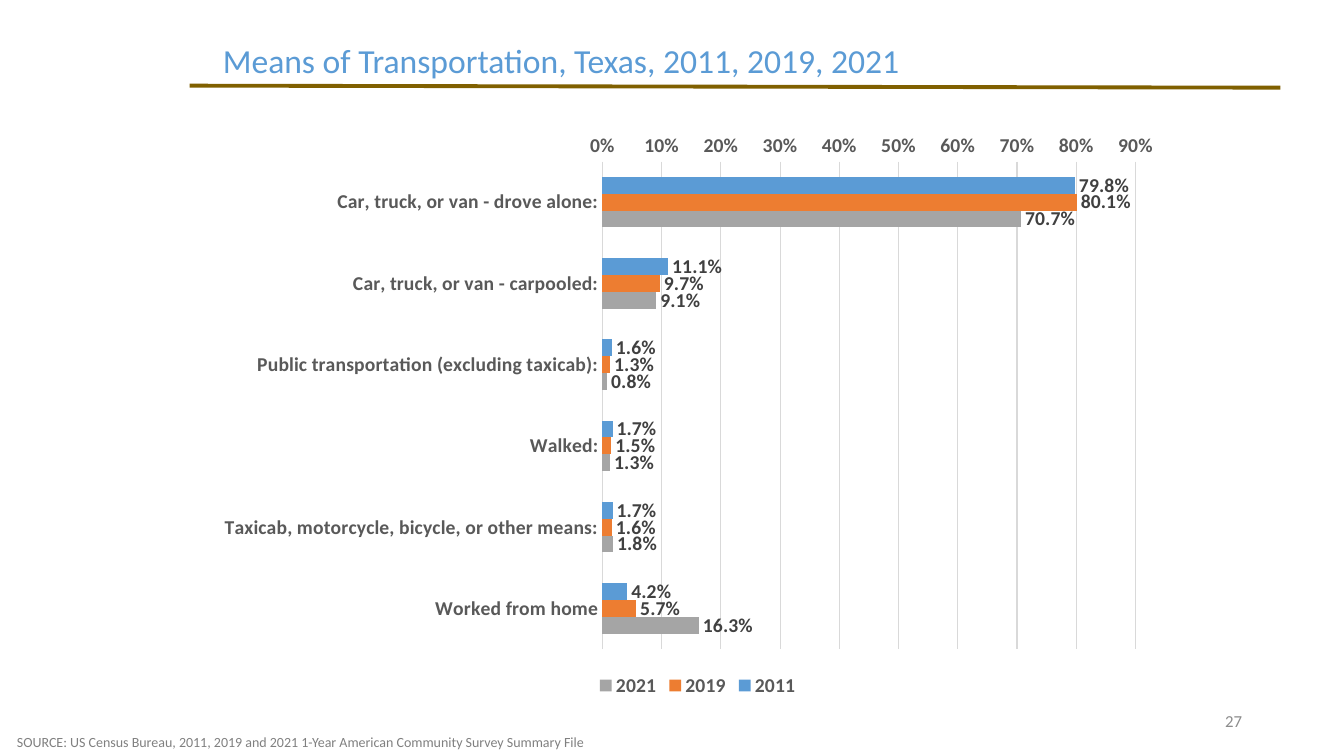
"""Build the slide on means of transportation in Texas."""
from lxml import etree
from pptx import Presentation
from pptx import util as u
from pptx.chart import data
from pptx.dml import color
from pptx.enum import chart as ce, shapes, text
from pptx.oxml import ns

COLORS = {"title": "5B9BD5", "rule": "806000", "number": "8C8C8C", "source": "808080",
          "axis": "595959", "grid": "D9D9D9", "label": "404040", "base": "000000",
          "2011": "5B9BD5", "2019": "ED7D31", "2021": "A5A5A5"}
CATEGORIES = ["Car, truck, or van - drove alone:", "Car, truck, or van - carpooled:",
              "Public transportation (excluding taxicab):", "Walked:",
              "Taxicab, motorcycle, bicycle, or other means:", "Worked from home"]
SHARES = {"2011": [0.798, 0.111, 0.016, 0.017, 0.017, 0.042],
          "2019": [0.801, 0.097, 0.013, 0.015, 0.016, 0.057],
          "2021": [0.707, 0.091, 0.008, 0.013, 0.018, 0.163]}


class Deck:
    """Style and current slide; places are percentages of the slide's size."""

    font = "Calibri"

    def __init__(self):
        self.prs = Presentation()
        self.prs.slide_width, self.prs.slide_height = u.Inches(13.33), u.Inches(7.5)
        self.s = self.prs.slides.add_slide(self.prs.slide_layouts[5])

    def place(self, x, y, w, h):
        sw, sh = self.prs.slide_width, self.prs.slide_height
        return [int(v * side / 100) for v, side in zip((x, y, w, h), (sw, sh, sw, sh))]

    def rgb(self, name):
        return color.RGBColor.from_string(COLORS[name])

    def style(self, font, size, name, bold=False):
        font.name, font.size, font.bold = self.font, u.Pt(size), bold
        font.color.rgb = self.rgb(name)

    def add_text(self, sp, content, size, name, align=text.PP_ALIGN.LEFT,
                 anchor=text.MSO_ANCHOR.TOP, wrap=False, spacing=1.0):
        tf = sp.text_frame
        tf.word_wrap, tf.vertical_anchor = wrap, anchor
        tf.auto_size = text.MSO_AUTO_SIZE.NONE if wrap else text.MSO_AUTO_SIZE.SHAPE_TO_FIT_TEXT
        p = tf.paragraphs[0]
        p.alignment, p.line_spacing, p.space_before = align, spacing, u.Pt(0)
        r = p.add_run()
        r.text = content
        self.style(r.font, size, name)

    def title(self, box, content):
        sp = self.s.shapes.title
        sp.left, sp.top, sp.width, sp.height = self.place(*box)
        self.add_text(sp, content, 24, "title", spacing=0.9)

    def note(self, box, content, size, name, **layout):
        self.add_text(self.s.shapes.add_textbox(*self.place(*box)), content, size, name, **layout)

    def rule(self, ends, name, width):
        sp = self.s.shapes.add_connector(shapes.MSO_CONNECTOR.STRAIGHT, *self.place(*ends))
        sp.line.color.rgb, sp.line.width = self.rgb(name), u.Pt(width)
        etree.SubElement(sp._element.spPr, ns.qn("a:effectLst"))

    def axis(self, axis):
        axis.major_tick_mark = axis.minor_tick_mark = ce.XL_TICK_MARK.NONE
        self.style(axis.tick_labels.font, 14, "axis", True)

    def plot_area(self, chart, **frame):
        area = chart._chartSpace.chart.plotArea
        for old in area.findall(ns.qn("c:layout")):
            area.remove(old)
        layout = etree.Element(ns.qn("c:layout"))
        manual = etree.SubElement(layout, ns.qn("c:manualLayout"))
        settings = {"layoutTarget": "inner", "xMode": "edge", "yMode": "edge", **frame}
        for tag, value in settings.items():
            etree.SubElement(manual, ns.qn("c:" + tag)).set("val", str(value))
        area.insert(0, layout)

    def bars(self, box, categories, shares):
        cd = data.CategoryChartData(number_format="0.0%")
        cd.categories = categories
        for year, values in shares.items():
            cd.add_series(year, values)
        chart = self.s.shapes.add_chart(
            ce.XL_CHART_TYPE.BAR_CLUSTERED, *self.place(*box), cd).chart
        self.style(chart.font, 14, "base", True)
        chart.has_title = False
        self.plot_area(chart, x=0.4, y=0.07, w=0.56, h=0.84)

        cat, val = chart.category_axis, chart.value_axis
        self.axis(cat)
        self.axis(val)
        cat.reverse_order = True
        cat.format.line.color.rgb, cat.format.line.width = self.rgb("grid"), u.Pt(0.75)
        val.minimum_scale, val.maximum_scale, val.major_unit = 0, 0.9, 0.1
        val.format.line.fill.background()
        val.tick_labels.number_format = "0%"
        val.tick_labels.number_format_is_linked = False
        grid = val.major_gridlines.format.line
        grid.color.rgb, grid.width = self.rgb("grid"), u.Pt(0.75)

        plot = chart.plots[0]
        plot.gap_width, plot.overlap, plot.vary_by_categories = 182, 0, False
        for series in plot.series:
            series.format.fill.solid()
            series.format.fill.fore_color.rgb = self.rgb(series.name)
            labels = series.data_labels
            labels.show_value = True
            labels.number_format, labels.number_format_is_linked = "0.0%", False
            labels.position = ce.XL_LABEL_POSITION.OUTSIDE_END
            self.style(labels.font, 14, "label", True)

        chart.has_legend = True
        chart.legend.position = ce.XL_LEGEND_POSITION.BOTTOM
        chart.legend.include_in_layout = False
        self.style(chart.legend.font, 14, "axis", True)


def main():
    deck = Deck()
    deck.rule((14.1, 11.33, 95.27, 11.6), "rule", 2.75)
    deck.title((15.83, 5.2, 52.29, 6.13), "Means of Transportation, Texas, 2011, 2019, 2021")
    deck.note((70.67, 92.67, 22.5, 5.33), "27", 12, "number", wrap=True,
              align=text.PP_ALIGN.RIGHT, anchor=text.MSO_ANCHOR.MIDDLE)
    deck.note((0.53, 96.4, 44.19, 3.6), "SOURCE: US Census Bureau, 2011, 2019 and 2021 "
              "1-Year American Community Survey Summary File", 10, "source")
    deck.bars((16.5, 16, 70.82, 76.8), CATEGORIES, SHARES)
    deck.prs.save("out.pptx")


if __name__ == "__main__":
    main()
